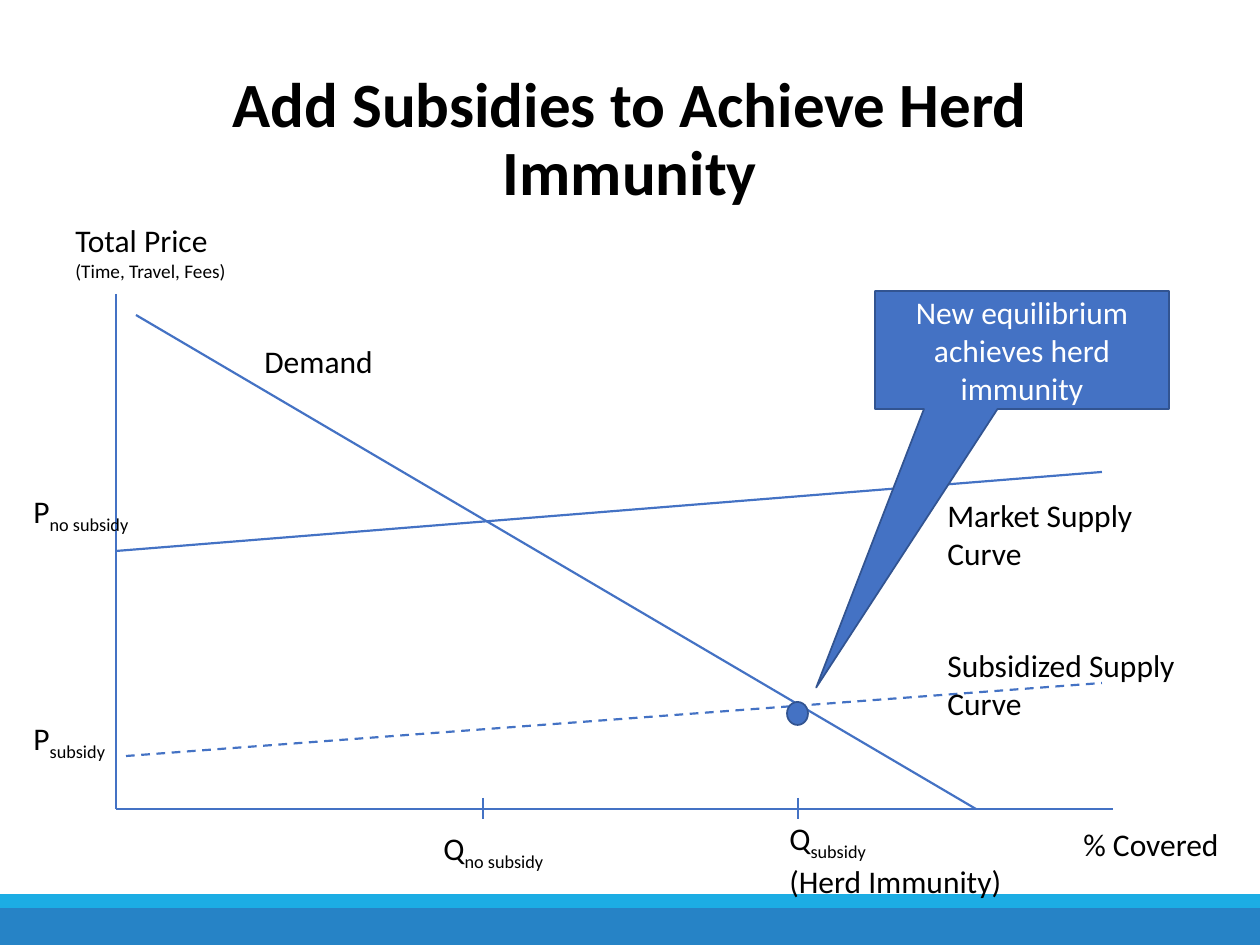
"""Build a slide on how subsidies move vaccine supply to herd immunity."""
from dataclasses import dataclass

from lxml import etree
from pptx import Presentation
from pptx.dml.color import RGBColor
from pptx.enum.dml import MSO_LINE
from pptx.enum.shapes import MSO_CONNECTOR, MSO_SHAPE
from pptx.enum.text import MSO_ANCHOR, MSO_AUTO_SIZE, PP_ALIGN
from pptx.oxml.ns import qn
from pptx.shapes.autoshape import Shape
from pptx.slide import Slide
from pptx.text.text import _Paragraph
from pptx.util import Emu, Pt

DASH = MSO_LINE.DASH
STRAIGHT = MSO_CONNECTOR.STRAIGHT
RECT, OVAL = MSO_SHAPE.RECTANGLE, MSO_SHAPE.OVAL
BUBBLE = MSO_SHAPE.RECTANGULAR_CALLOUT
MIDDLE, CENTER = MSO_ANCHOR.MIDDLE, PP_ALIGN.CENTER
GROW = MSO_AUTO_SIZE.SHAPE_TO_FIT_TEXT
SCALE = 914400 / 126
FACE = "Calibri"
COLORS = {
    "black": "000000", "white": "FFFFFF", "blue": "4472C4",
    "edge": "325491", "band": "2683C6", "strip": "1CADE4",
}


@dataclass
class Line:
    x1: int
    y1: int
    x2: int
    y2: int
    width: float = 1.25
    dashed: bool = False


@dataclass
class Row:
    text: str
    sub: str = ""
    size: int = 18


@dataclass
class Label:
    x: int
    y: int
    w: int
    h: int
    rows: list[Row]


@dataclass
class Block:
    kind: MSO_SHAPE
    x: int
    y: int
    w: int
    h: int
    fill: str
    edge: str


LEFT, BASE = 116, 809
BANDS = [
    Block(RECT, 0, 906, 1260, 39, "band", "band"),
    Block(RECT, 0, 895, 1260, 12, "strip", "strip"),
]
POINT = Block(OVAL, 787, 702, 21, 23, "blue", "edge")
CALLOUT = Block(BUBBLE, 875, 291, 294, 118, "blue", "edge")
LINES = [
    Line(LEFT, 294, LEFT, BASE),
    Line(136, 315, 976, BASE),
    Line(1102, 472, LEFT, 551),
    Line(1113, BASE, LEFT, BASE),
    Line(126, 756, 1102, 683, dashed=True),
    Line(483, 798, 483, 819, 1.5),
    Line(798, 798, 798, 819),
]
LABELS = [
    Label(63, 215, 179, 77, [Row("Total Price"), Row("(Time, Travel, Fees)", size=11)]),
    Label(1071, 819, 168, 51, [Row("% Covered")]),
    Label(777, 813, 252, 89, [Row("Q", "subsidy"), Row("(Herd Immunity)")]),
    Label(431, 823, 168, 51, [Row("Q", "no subsidy")]),
    Label(252, 336, 147, 51, [Row("Demand")]),
    Label(935, 490, 239, 89, [Row("Market Supply Curve")]),
    Label(935, 640, 294, 89, [Row("Subsidized Supply Curve")]),
    Label(21, 486, 168, 51, [Row("P", "no subsidy")]),
    Label(21, 713, 168, 51, [Row("P", "subsidy")]),
]


def px(*sizes: int) -> list[Emu]:
    """Turn pixels into EMU."""
    return [Emu(round(size * SCALE)) for size in sizes]


def shade(name: str) -> RGBColor:
    """Look up a colour by name."""
    return RGBColor.from_string(COLORS[name])


def style(para: _Paragraph, size: int, color: str, bold: bool = False) -> None:
    """Set the font of a paragraph."""
    font = para.font
    font.name, font.size, font.bold = FACE, Pt(size), bold
    font.color.rgb = shade(color)


def draw_line(slide: Slide, line: Line) -> None:
    """Draw a straight line without a shadow."""
    ends = px(line.x1, line.y1, line.x2, line.y2)
    link = slide.shapes.add_connector(STRAIGHT, *ends)
    link.line.color.rgb = shade("blue")
    link.line.width = Pt(line.width)
    if line.dashed:
        link.line.dash_style = DASH
    etree.SubElement(link._element.spPr, qn("a:effectLst"))


def draw_block(slide: Slide, block: Block) -> Shape:
    """Draw a filled preset shape."""
    shape = slide.shapes.add_shape(block.kind, *px(block.x, block.y, block.w, block.h))
    shape.shadow.inherit = False
    shape.fill.solid()
    shape.fill.fore_color.rgb = shade(block.fill)
    shape.line.color.rgb = shade(block.edge)
    shape.line.width = Pt(1)
    return shape


def draw_label(slide: Slide, label: Label) -> None:
    """Draw a text box, with subscripts where rows have them."""
    box = slide.shapes.add_textbox(*px(label.x, label.y, label.w, label.h))
    frame = box.text_frame
    frame.word_wrap, frame.auto_size = True, GROW
    for i, row in enumerate(label.rows):
        para = frame.add_paragraph() if i else frame.paragraphs[0]
        style(para, row.size, "black")
        para.add_run().text = row.text
        if row.sub:
            run = para.add_run()
            run.text = row.sub
            run._r.get_or_add_rPr().set("baseline", "-25000")


def draw_title(slide: Slide) -> None:
    """Draw the centred heading."""
    frame = slide.shapes.add_textbox(*px(87, 50, 1086, 183)).text_frame
    frame.word_wrap, frame.vertical_anchor = True, MIDDLE
    para = frame.paragraphs[0]
    para.text = "Add Subsidies to Achieve Herd Immunity"
    para.alignment, para.line_spacing = CENTER, 0.9
    style(para, 36, "black", True)


def draw_callout(slide: Slide) -> None:
    """Draw the callout that points at the new equilibrium."""
    shape = draw_block(slide, CALLOUT)
    shape.adjustments[0], shape.adjustments[1] = -0.7, 2.86
    frame = shape.text_frame
    frame.word_wrap, frame.vertical_anchor = True, MIDDLE
    para = frame.paragraphs[0]
    para.text = "New equilibrium achieves herd immunity"
    para.alignment = CENTER
    style(para, 18, "white")


def main() -> None:
    """Build and save the slide."""
    deck = Presentation()
    deck.slide_width, deck.slide_height = px(1260, 945)
    slide = deck.slides.add_slide(deck.slide_layouts[6])
    for band in BANDS:
        draw_block(slide, band)
    draw_title(slide)
    for line in LINES:
        draw_line(slide, line)
    for label in LABELS:
        draw_label(slide, label)
    draw_block(slide, POINT)
    draw_callout(slide)
    deck.save("out.pptx")


if __name__ == "__main__":
    main()
